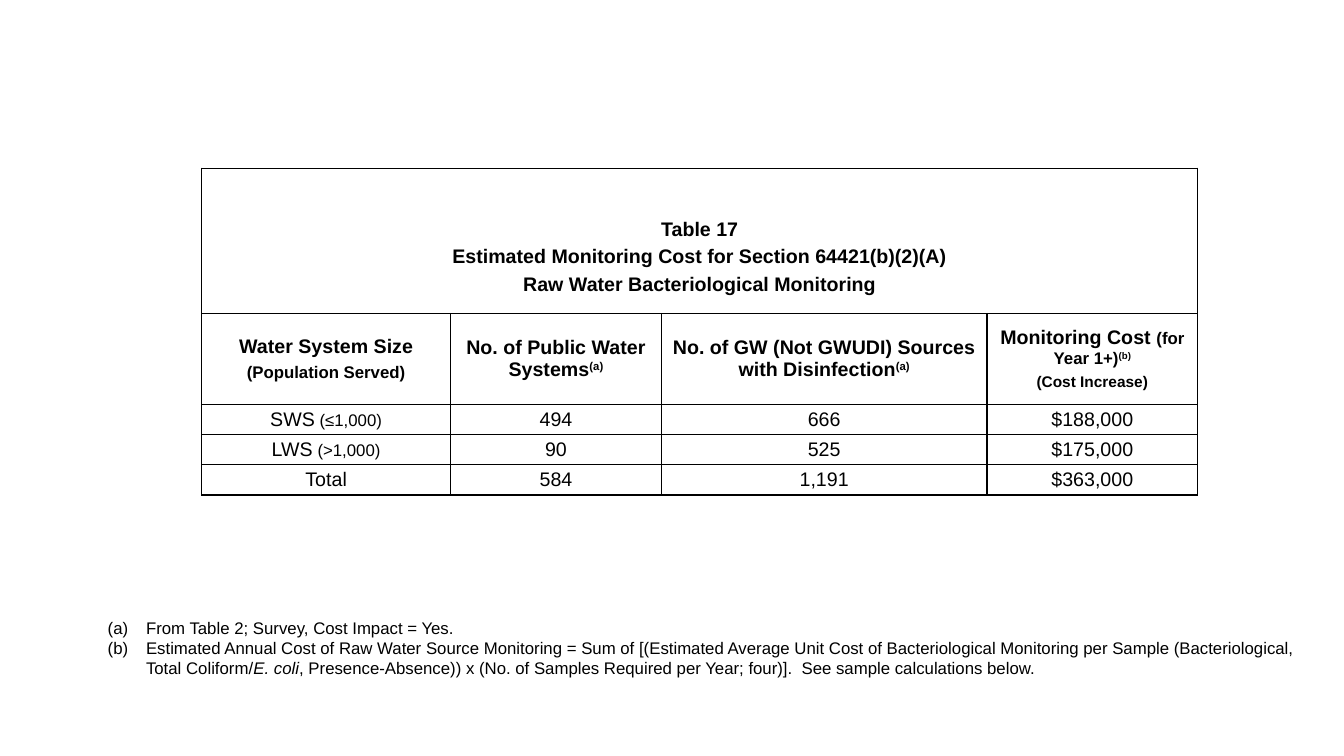
import lxml.etree
import pptx
import pptx.dml.color
import pptx.enum.text
import pptx.oxml.ns
import pptx.util

Inches = pptx.util.Inches
Pt = pptx.util.Pt
qn = pptx.oxml.ns.qn
BLACK = pptx.dml.color.RGBColor(0, 0, 0)


def add_span(para, text, size, bold=False, italic=False, raised=False):
    span = para.add_run()
    span.text = text
    span.font.name = "Arial"
    span.font.size = Pt(size)
    span.font.bold = bold
    span.font.italic = italic
    span.font.color.rgb = BLACK
    if raised:
        span.font._element.set("baseline", "30000")


def add_borders(cell):
    properties = cell._tc.get_or_add_tcPr()
    for side in ("a:lnL", "a:lnR", "a:lnT", "a:lnB"):
        line = lxml.etree.SubElement(properties, qn(side), w=str(Pt(1)))
        fill = lxml.etree.SubElement(line, qn("a:solidFill"))
        lxml.etree.SubElement(fill, qn("a:srgbClr"), val=str(BLACK))


deck = pptx.Presentation()
deck.slide_width = Inches(13.33)
deck.slide_height = Inches(7.5)
page = deck.slides.add_slide(deck.slide_layouts[6])

title = [
    [("Table 17", 14)],
    [("Estimated Monitoring Cost for Section 64421(b)(2)(A)", 14)],
    [("Raw Water Bacteriological Monitoring", 14)],
]
headings = [
    [[("Water System Size", 14)], [("(Population Served)", 12)]],
    [[("No. of Public Water Systems", 14), ("(a)", 14)]],
    [[("No. of GW (Not GWUDI) Sources with Disinfection", 14), ("(a)", 14)]],
    [[("Monitoring Cost ", 14), ("(for Year 1+)", 12), ("(b)", 12)], [("(Cost Increase)", 11)]],
]
systems = [
    ([("SWS", 14), (" (≤1,000)", 12)], "494", "666", "$188,000"),
    ([("LWS", 14), (" (>1,000)", 12)], "90", "525", "$175,000"),
    ([("Total", 14)], "584", "1,191", "$363,000"),
]
rows = [[title, [], [], []], headings]
for name, *values in systems:
    rows.append([[name]] + [[[(value, 14)]] for value in values])

widths = [2.47, 2.09, 3.23, 2.09]
heights = [1.44, 0.9, 0.3, 0.3, 0.3]
table = page.shapes.add_table(
    len(heights), len(widths), Inches(2), Inches(1.67), Inches(sum(widths)), Inches(sum(heights))
).table
table.first_row = False
table.horz_banding = False
for column, width in zip(table.columns, widths):
    column.width = Inches(width)
for row, height in zip(table.rows, heights):
    row.height = Inches(height)
table.cell(0, 0).merge(table.cell(0, 3))

for row_index, row in enumerate(rows):
    for column_index, lines in enumerate(row):
        cell = table.cell(row_index, column_index)
        add_borders(cell)
        cell.fill.background()
        cell.vertical_anchor = pptx.enum.text.MSO_ANCHOR.MIDDLE
        cell.margin_left = cell.margin_right = Inches(0.07)
        cell.margin_top = cell.margin_bottom = 0
        for line_index, line in enumerate(lines):
            para = cell.text_frame.add_paragraph() if line_index else cell.text_frame.paragraphs[0]
            para.alignment = pptx.enum.text.PP_ALIGN.CENTER
            para.space_before = para.space_after = Pt(2)
            for text, size in line:
                add_span(para, text, size, bold=row_index < 2, raised=text in ("(a)", "(b)"))
table.cell(0, 0).margin_top = Inches(0.32)

notes = [
    [("From Table 2; Survey, Cost Impact = Yes.", False)],
    [
        ("Estimated Annual Cost of Raw Water Source Monitoring = Sum of [(Estimated Average Unit Cost "
         "of Bacteriological Monitoring per Sample (Bacteriological, Total Coliform/", False),
        ("E. coli", True),
        (", Presence-Absence)) x (No. of Samples Required per Year; four)].  "
         "See sample calculations below.", False),
    ],
]
box = page.shapes.add_textbox(Inches(0.97), Inches(6.08), Inches(12.12), Inches(0.71))
frame = box.text_frame
frame.word_wrap = True
frame.auto_size = pptx.enum.text.MSO_AUTO_SIZE.SHAPE_TO_FIT_TEXT
for note_index, note in enumerate(notes):
    para = frame.add_paragraph() if note_index else frame.paragraphs[0]
    if note_index:
        para.space_after = Pt(24)
    else:
        para.space_before = Pt(2)
    properties = para._p.get_or_add_pPr()
    properties.set("marL", str(Inches(0.38)))
    properties.set("indent", str(-Inches(0.38)))
    lxml.etree.SubElement(properties, qn("a:buFont"), typeface="Arial")
    lxml.etree.SubElement(properties, qn("a:buAutoNum"), type="alphaLcParenBoth")
    for text, italic in note:
        add_span(para, text, 12, italic=italic)

deck.save("out.pptx")
